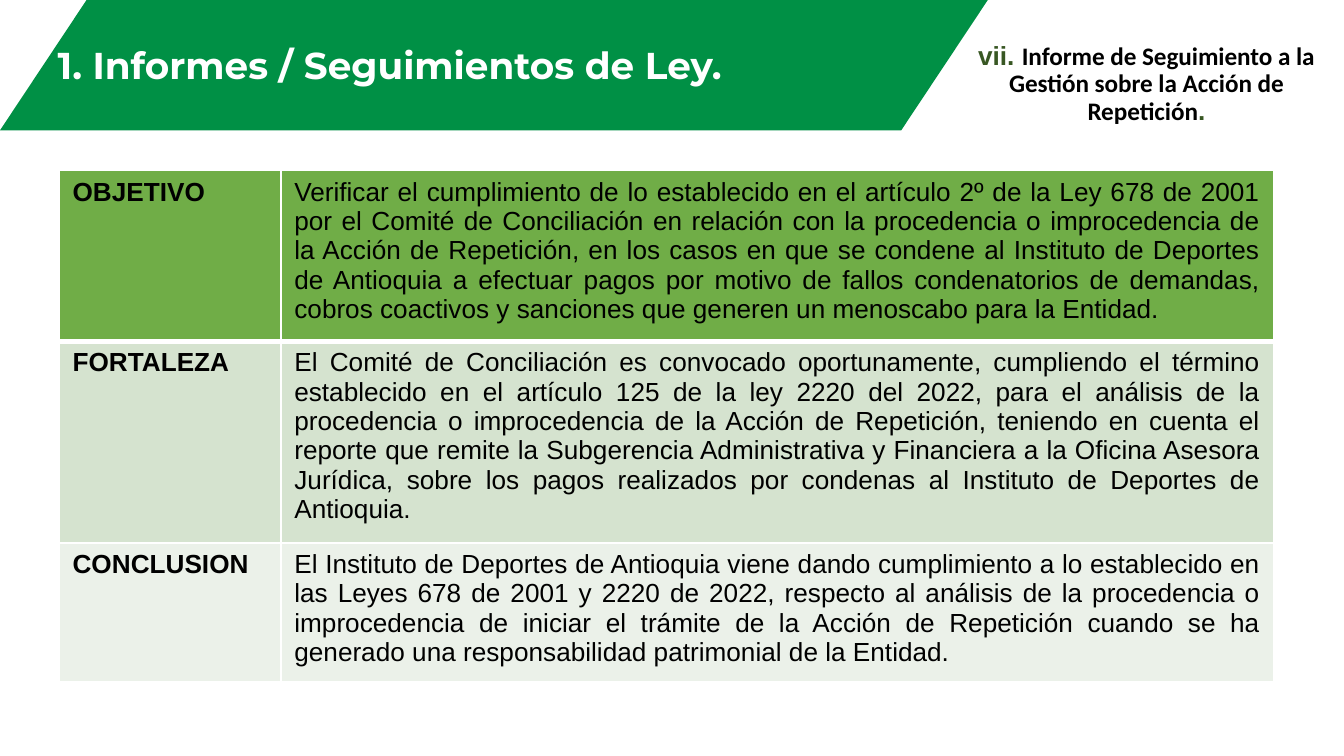
from dataclasses import dataclass

import pptx
import pptx.dml.color
import pptx.enum.shapes
import pptx.enum.text
import pptx.oxml
import pptx.oxml.ns
import pptx.util
from pptx.util import Inches

HUES = {
    "band": "009045", "head": "70AD47", "mid": "D5E3CF", "pale": "EBF1E9",
    "mark": "385723", "ink": "000000", "white": "FFFFFF",
}
ALIGN = pptx.enum.text.PP_ALIGN
WIDE = 10
HIGH = WIDE * 9 / 16


@dataclass
class Run:
    text: str
    size: float
    font: str = "Arial"
    hue: str = "ink"
    bold: bool = True


@dataclass
class Row:
    label: str
    body: str
    hue: str
    height: float


ROWS = [
    Row("OBJETIVO", "Verificar el cumplimiento de lo establecido en el artículo 2º de la Ley 678 de 2001 "
        "por el Comité de Conciliación en relación con la procedencia o improcedencia de la Acción de "
        "Repetición, en los casos en que se condene al Instituto de Deportes de Antioquia a efectuar "
        "pagos por motivo de fallos condenatorios de demandas, cobros coactivos y sanciones que generen "
        "un menoscabo para la Entidad.", "head", 1.27),
    Row("FORTALEZA", "El Comité de Conciliación es convocado oportunamente, cumpliendo el término "
        "establecido en el artículo 125 de la ley 2220 del 2022, para el análisis de la procedencia o "
        "improcedencia de la Acción de Repetición, teniendo en cuenta el reporte que remite la "
        "Subgerencia Administrativa y Financiera a la Oficina Asesora Jurídica, sobre los pagos "
        "realizados por condenas al Instituto de Deportes de Antioquia.", "mid", 1.5),
    Row("CONCLUSION", "El Instituto de Deportes de Antioquia viene dando cumplimiento a lo establecido en "
        "las Leyes 678 de 2001 y 2220 de 2022, respecto al análisis de la procedencia o improcedencia de "
        "iniciar el trámite de la Acción de Repetición cuando se ha generado una responsabilidad "
        "patrimonial de la Entidad.", "pale", 1.03),
]
COLS = [1.65, 7.39]


def rgb(hue: str) -> pptx.dml.color.RGBColor:
    return pptx.dml.color.RGBColor.from_string(HUES[hue])


def write(frame, runs: list[Run], align, space: float = 1.0) -> None:
    frame.word_wrap = True
    para = frame.paragraphs[0]
    para.alignment = align
    para.line_spacing = space
    for item in runs:
        run = para.add_run()
        run.text = item.text
        font = run.font
        font.name, font.size, font.bold = item.font, pptx.util.Pt(item.size), item.bold
        font.color.rgb = rgb(item.hue)


def edge(cell, side: str, width: float) -> None:
    """Draw one white border; call before the cell is filled."""
    line = pptx.oxml.parse_xml(
        f'<a:ln{side} {pptx.oxml.ns.nsdecls("a")} w="{pptx.util.Pt(width)}"><a:solidFill>'
        f'<a:srgbClr val="{HUES["white"]}"/></a:solidFill></a:ln{side}>')
    cell._tc.get_or_add_tcPr().append(line)


def add_band(slide) -> None:
    band = slide.shapes.add_shape(
        pptx.enum.shapes.MSO_SHAPE.PARALLELOGRAM, 0, 0, Inches(7.35), Inches(0.97))
    band.adjustments[0] = 0.664
    band.shadow.inherit = False
    band.fill.solid()
    band.fill.fore_color.rgb = rgb("band")
    band.line.fill.background()
    slide.shapes.title.element.addprevious(band.element)


def add_title(slide) -> None:
    title = slide.shapes.title
    title.left, title.top = Inches(0), Inches(0.27)
    title.width, title.height = Inches(5.88), Inches(0.43)
    frame = title.text_frame
    frame.auto_size = pptx.enum.text.MSO_AUTO_SIZE.NONE
    frame.vertical_anchor = pptx.enum.text.MSO_ANCHOR.BOTTOM
    write(frame, [Run("1. Informes / Seguimientos de Ley. ", 20, "Montserrat", "white")],
          ALIGN.CENTER, 0.9)


def add_topic(slide) -> None:
    box = slide.shapes.add_textbox(Inches(7.14), Inches(0.27), Inches(2.78), Inches(0.73))
    write(box.text_frame, [
        Run("vii. ", 14, hue="mark"),
        Run("Informe de Seguimiento a la Gestión sobre la Acción de Repetición", 13.5, "Calibri"),
        Run(".", 14, hue="mark"),
    ], ALIGN.CENTER, 0.9)


def add_grid(slide, rows: list[Row]) -> None:
    grid = slide.shapes.add_table(
        len(rows), len(COLS), Inches(0.44), Inches(1.27),
        Inches(sum(COLS)), Inches(sum(row.height for row in rows))).table
    for col, width in zip(grid.columns, COLS):
        col.width = Inches(width)
    for i, row in enumerate(rows):
        grid.rows[i].height = Inches(row.height)
        for j, text in enumerate((row.label, row.body)):
            cell = grid.cell(i, j)
            widths = {"L": 1, "R": 1, "T": 3 if i == 1 else 1, "B": 3 if i == 0 else 1}
            for side, width in widths.items():
                edge(cell, side, width)
            cell.fill.solid()
            cell.fill.fore_color.rgb = rgb(row.hue)
            write(cell.text_frame, [Run(text, 14, bold=j == 0)], ALIGN.JUSTIFY)


def main() -> None:
    deck = pptx.Presentation()
    deck.slide_width, deck.slide_height = Inches(WIDE), Inches(HIGH)
    slide = deck.slides.add_slide(deck.slide_layouts[5])
    add_band(slide)
    add_title(slide)
    add_topic(slide)
    add_grid(slide, ROWS)
    deck.save("out.pptx")


if __name__ == "__main__":
    main()
